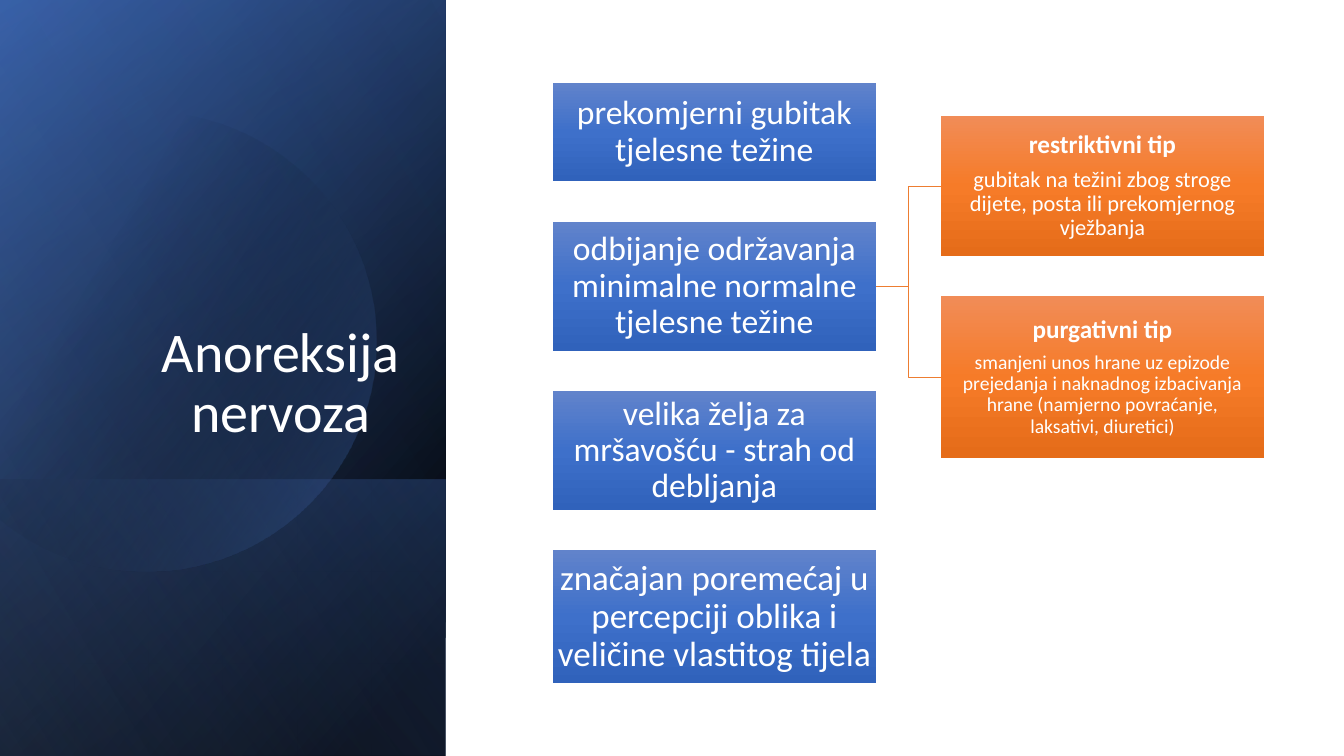
import math

from lxml import etree
from pptx import Presentation
from pptx.dml.color import RGBColor
from pptx.enum.shapes import MSO_CONNECTOR, MSO_SHAPE
from pptx.enum.text import MSO_ANCHOR, PP_ALIGN
from pptx.oxml import parse_xml
from pptx.oxml.ns import nsdecls, qn
from pptx.util import Inches, Pt

RECTANGLE = MSO_SHAPE.RECTANGLE
ELBOW = MSO_CONNECTOR.ELBOW
MIDDLE, BOTTOM = MSO_ANCHOR.MIDDLE, MSO_ANCHOR.BOTTOM
CENTER = PP_ALIGN.CENTER
RIGHT_SITE, LEFT_SITE = 3, 1

FONT = "Calibri"
WHITE, ORANGE = "FFFFFF", "ED7D31"
BLUE_STOPS = [(0, "6183CB", 100), (50, "3E70CA", 100), (100, "3062BB", 100)]
ORANGE_STOPS = [(0, "F18C57", 100), (50, "F67B28", 100), (100, "E56C19", 100)]

TITLE = "Anoreksija\vnervoza"
SYMPTOMS = [
    (0.98, [("prekomjerni gubitak tjelesne težine", 24, False)]),
    (1.28, [("odbijanje održavanja minimalne normalne tjelesne težine", 24, False)]),
    (1.18, [("velika želja za mršavošću - strah od debljanja", 24, False)]),
    (1.32, [("značajan poremećaj u percepciji oblika i veličine vlastitog tijela", 25, False)]),
]
TYPES = [
    (1.39, [
        ("restriktivni tip", 18, True),
        ("gubitak na težini zbog stroge dijete, posta ili prekomjernog vježbanja", 16, False),
    ]),
    (1.6, [
        ("purgativni tip", 18, True),
        ("smanjeni unos hrane uz epizode prejedanja i naknadnog izbacivanja hrane "
         "(namjerno povraćanje, laksativi, diuretici)", 14, False),
    ]),
]

SLIDE_WIDTH, SLIDE_HEIGHT = 13.33, 7.5
PANEL_WIDTH = 4.42
LOWER_HEIGHT = 2.74
BOX_WIDTH, BOX_GAP = 3.21, 0.4
SYMPTOM_LEFT, SYMPTOM_TOP, SYMPTOM_INSET = 5.48, 0.82, 0.02
TYPE_LEFT, TYPE_TOP, TYPE_INSET = 9.33, 1.15, 0.1
CIRCLE_X, CIRCLE_Y, CIRCLE_RADIUS = 1.45, 3.39, 2.28
CIRCLE_STEPS = 120

PANEL_BASE = ([(8, "000000", 100), (100, "2F5597", 100)], 50)
PANEL_SHEEN = ([(0, "000000", 0), (99, "4472C4", 46)], 30)
LOWER_SHADE = ([(2, "4472C4", 29), (100, "000000", 30)], 130)
CIRCLE_GLOW = ([(29, "000000", 0), (100, "4472C4", 43)], 30)
PANEL_TINT = ([(0, "000000", 0), (99, "8FAADC", 11)], 120)


def colour(target, value):
    target.rgb = RGBColor.from_string(value)


def paint(shape, stops, angle):
    shape.shadow.inherit = False
    shape.line.fill.background()
    shape.fill.gradient()
    marks = "".join(
        f'<a:gs pos="{place * 1000}"><a:srgbClr val="{value}">'
        f'<a:alpha val="{alpha * 1000}"/></a:srgbClr></a:gs>'
        for place, value, alpha in stops
    )
    gradient = parse_xml(
        f'<a:gradFill {nsdecls("a")} rotWithShape="1"><a:gsLst>{marks}</a:gsLst>'
        f'<a:lin ang="{angle * 60000}" scaled="0"/></a:gradFill>'
    )
    properties = shape._element.spPr
    properties.replace(properties.find(qn("a:gradFill")), gradient)


def add_panel(page, height, stops, angle):
    left = (PANEL_WIDTH - height) / 2
    top = SLIDE_HEIGHT - height / 2 - PANEL_WIDTH / 2
    panel = page.shapes.add_shape(
        RECTANGLE, Inches(left), Inches(top), Inches(height), Inches(PANEL_WIDTH))
    panel.rotation = 90
    panel._element.spPr.find(qn("a:xfrm")).set("flipH", "1")
    paint(panel, stops, angle)


def add_circle(page):
    limit = math.acos(-CIRCLE_X / CIRCLE_RADIUS)
    angles = [limit * (2 * step / CIRCLE_STEPS - 1) for step in range(CIRCLE_STEPS + 1)]
    points = [
        (Inches(CIRCLE_X + CIRCLE_RADIUS * math.cos(angle)),
         Inches(CIRCLE_Y + CIRCLE_RADIUS * math.sin(angle)))
        for angle in angles
    ]
    builder = page.shapes.build_freeform(*points[0], scale=1.0)
    builder.add_line_segments(points[1:], close=True)
    paint(builder.convert_to_shape(), *CIRCLE_GLOW)


def write(para, text, size, bold):
    para.text = text
    para.alignment = CENTER
    para.line_spacing = 0.9
    for span in para.runs:
        span.font.name = FONT
        span.font.size = Pt(size)
        span.font.bold = bold
        colour(span.font.color, WHITE)


def set_frame(frame, anchor, left, right, vertical):
    frame.word_wrap = True
    frame.vertical_anchor = anchor
    frame.margin_left, frame.margin_right = Inches(left), Inches(right)
    frame.margin_top = frame.margin_bottom = Inches(vertical)


def add_title(page):
    box = page.shapes.add_textbox(Inches(0.64), Inches(1.84), Inches(3.41), Inches(2.62))
    set_frame(box.text_frame, BOTTOM, 0.88, 0, 0.05)
    write(box.text_frame.paragraphs[0], TITLE, 40, False)


def add_column(page, entries, left, top, stops, inset):
    boxes = []
    for height, lines in entries:
        box = page.shapes.add_shape(
            RECTANGLE, Inches(left), Inches(top), Inches(BOX_WIDTH), Inches(height))
        paint(box, stops, 90)
        frame = box.text_frame
        set_frame(frame, MIDDLE, inset, inset, 0.02)
        frame.text = "\n".join(text for text, size, bold in lines)
        for para, (text, size, bold) in zip(frame.paragraphs, lines):
            write(para, text, size, bold)
            para.space_after = Pt(round(size * 0.35, 1))
        boxes.append(box)
        top += height + BOX_GAP
    return boxes


def link(page, source, target):
    connector = page.shapes.add_connector(
        ELBOW, source.left + source.width, source.top + source.height // 2,
        target.left, target.top + target.height // 2)
    connector.begin_connect(source, RIGHT_SITE)
    connector.end_connect(target, LEFT_SITE)
    connector.line.width = Pt(0.5)
    colour(connector.line.color, ORANGE)
    etree.SubElement(connector._element.spPr, qn("a:effectLst"))


def main():
    deck = Presentation()
    deck.slide_width, deck.slide_height = Inches(SLIDE_WIDTH), Inches(SLIDE_HEIGHT)
    page = deck.slides.add_slide(deck.slide_layouts[6])
    add_panel(page, SLIDE_HEIGHT, *PANEL_BASE)
    add_panel(page, SLIDE_HEIGHT, *PANEL_SHEEN)
    add_panel(page, LOWER_HEIGHT, *LOWER_SHADE)
    add_circle(page)
    add_panel(page, SLIDE_HEIGHT, *PANEL_TINT)
    add_title(page)
    symptoms = add_column(
        page, SYMPTOMS, SYMPTOM_LEFT, SYMPTOM_TOP, BLUE_STOPS, SYMPTOM_INSET)
    types = add_column(page, TYPES, TYPE_LEFT, TYPE_TOP, ORANGE_STOPS, TYPE_INSET)
    for kind in types:
        link(page, symptoms[1], kind)
    deck.save("out.pptx")


if __name__ == "__main__":
    main()
